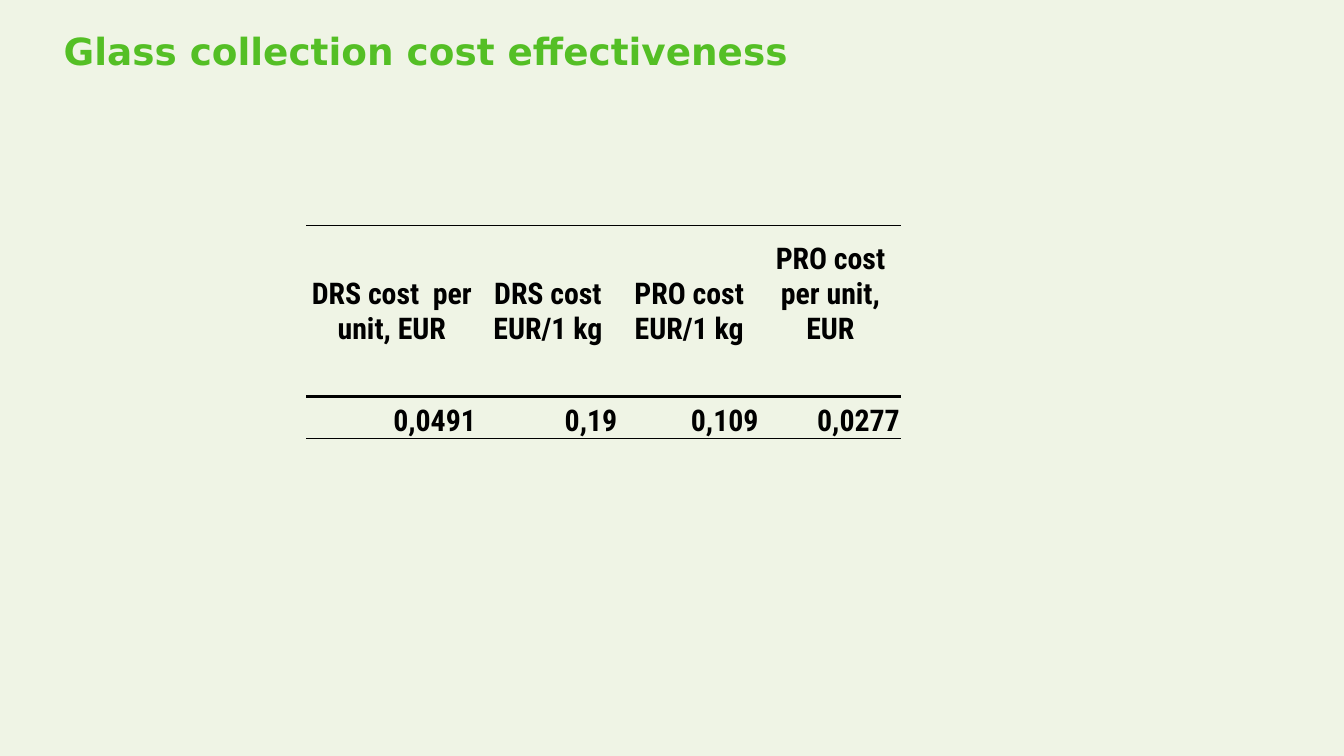
from lxml.etree import SubElement as Sub
from pptx import Presentation as Deck
from pptx.dml.color import RGBColor as RGB
from pptx.enum.text import MSO_ANCHOR as Anchor, PP_ALIGN as Align
from pptx.oxml.ns import qn
from pptx.util import Inches, Pt

GREEN = RGB(0x54, 0xBF, 0x25)
BLACK = RGB(0x00, 0x00, 0x00)
CREAM = RGB(0xEF, 0xF4, 0xE5)
WIDE = Inches(10)
HIGH = WIDE * 9 // 16
THIN, THICK = 0.5, 2
COLS = [1.27, 1.05, 1.05, 1.05]
ROWS = [
    (1.27, THIN, THICK, Align.CENTER, Anchor.MIDDLE,
     ["DRS cost  per unit, EUR", "DRS cost EUR/1 kg",
      "PRO cost EUR/1 kg", "PRO cost per unit, EUR"]),
    (0.31, THICK, THIN, Align.RIGHT, Anchor.BOTTOM,
     ["0,0491", "0,19", "0,109", "0,0277"]),
]


def share(left, top, width, height):
    return [int(WIDE * left / 100), int(HIGH * top / 100),
            int(WIDE * width / 100), int(HIGH * height / 100)]


def write(para, text, face, size, color):
    run = para.add_run()
    run.text = text
    run.font.name = face
    run.font.size = Pt(size)
    run.font.bold = True
    run.font.color.rgb = color


def rule(cell, top, low):
    props = cell._tc.get_or_add_tcPr()
    sides = {"lnL": 0, "lnR": 0, "lnT": top, "lnB": low}
    for spot, (side, size) in enumerate(sides.items()):
        line = Sub(props, qn(f"a:{side}"), w=str(Pt(size)))
        if size:
            fill = Sub(line, qn("a:solidFill"))
            Sub(fill, qn("a:srgbClr"), val=str(BLACK))
        else:
            Sub(line, qn("a:noFill"))
        props.insert(spot, line)


def title(slide, box):
    frame = slide.shapes.add_textbox(*box).text_frame
    frame.word_wrap = True
    para = frame.paragraphs[0]
    para.line_spacing = 0.9
    write(para, "Glass collection cost effectiveness",
          "DejaVu Sans", 20, GREEN)


def costs(slide, box):
    table = slide.shapes.add_table(len(ROWS), len(COLS), *box).table
    table.first_row = table.horz_banding = False
    for col, part in zip(table.columns, COLS):
        col.width = int(box[2] * part / sum(COLS))
    total = sum(row[0] for row in ROWS)
    for line, (part, top, low, align, anchor, texts) in zip(table.rows, ROWS):
        line.height = int(box[3] * part / total)
        for cell, text in zip(line.cells, texts):
            cell.fill.background()
            rule(cell, top, low)
            cell.margin_left = cell.margin_right = Inches(0.01)
            cell.margin_top, cell.margin_bottom = Inches(0.01), 0
            cell.vertical_anchor = anchor
            para = cell.text_frame.paragraphs[0]
            para.alignment = align
            write(para, text, "Roboto Condensed", 16, BLACK)
    table.cell(0, len(COLS) - 1).margin_bottom = Inches(0.26)


def main():
    deck = Deck()
    deck.slide_width, deck.slide_height = WIDE, HIGH
    slide = deck.slides.add_slide(deck.slide_layouts[6])
    back = slide.background.fill
    back.solid()
    back.fore_color.rgb = CREAM
    title(slide, share(3.75, 3.5, 58.7, 9.6))
    costs(slide, share(22.8, 29.87, 44.25, 28.1))
    deck.save("out.pptx")


if __name__ == "__main__":
    main()
